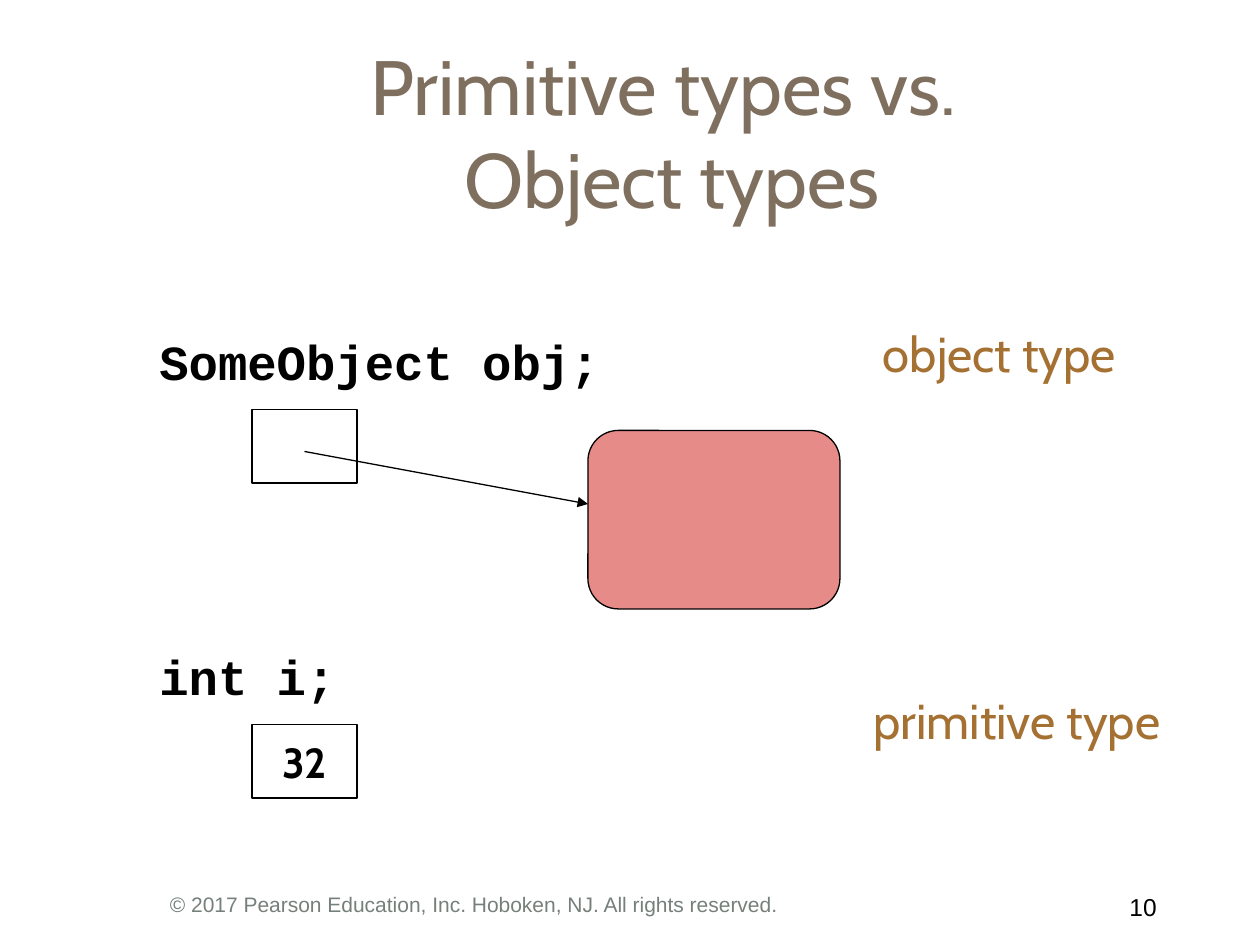
import pptx
import pptx.util
import pptx.dml.color
import pptx.enum.shapes
import pptx.enum.text
import pptx.oxml.ns
import lxml.etree

Pt = pptx.util.Pt
RGBColor = pptx.dml.color.RGBColor
ALIGN = pptx.enum.text.PP_ALIGN
ANCHOR = pptx.enum.text.MSO_ANCHOR
AUTO_SIZE = pptx.enum.text.MSO_AUTO_SIZE
SHAPE = pptx.enum.shapes.MSO_SHAPE

BLACK = RGBColor(0x00, 0x00, 0x00)
TITLE_BROWN = RGBColor(0x7F, 0x6F, 0x5E)
LABEL_BROWN = RGBColor(0xA5, 0x71, 0x33)
FOOTER_GRAY = RGBColor(0x76, 0x80, 0x7A)
OBJECT_PINK = RGBColor(0xE6, 0x8B, 0x88)

VARIABLE_LEFT, VARIABLE_WIDTH, VARIABLE_HEIGHT = 144, 60, 42


def format_text(frame, text, font, size, color, bold=False, align=ALIGN.LEFT):
    frame.text = text
    for para in frame.paragraphs:
        para.alignment = align
        for run in para.runs:
            run.font.name = font
            run.font.size = Pt(size)
            run.font.color.rgb = color
            run.font.bold = bold


def add_title(slide, text):
    title = slide.shapes.title
    title.left, title.top, title.width, title.height = Pt(78), Pt(30), Pt(612), Pt(90)
    format_text(title.text_frame, text, "Cabin", 44, TITLE_BROWN, align=ALIGN.CENTER)
    title.text_frame.vertical_anchor = ANCHOR.MIDDLE
    title.text_frame.auto_size = AUTO_SIZE.NONE


def add_text(slide, left, top, width, height, text, font, size, color, wrap=True, **style):
    box = slide.shapes.add_textbox(Pt(left), Pt(top), Pt(width), Pt(height))
    box.text_frame.word_wrap = wrap
    format_text(box.text_frame, text, font, size, color, **style)


def add_code(slide, top, text):
    add_text(slide, 84, top, 282, 41, text, "Courier New", 28, BLACK, bold=True)


def add_label(slide, left, top, width, text):
    add_text(slide, left, top, width, 41, text, "Cabin", 28, LABEL_BROWN, wrap=False)


def add_outlined(slide, preset, left, top, width, height, fill=None):
    shape = slide.shapes.add_shape(preset, Pt(left), Pt(top), Pt(width), Pt(height))
    shape.shadow.inherit = False
    if fill is None:
        shape.fill.background()
    else:
        shape.fill.solid()
        shape.fill.fore_color.rgb = fill
    shape.line.color.rgb = BLACK
    shape.line.width = Pt(0.75)
    return shape


def add_variable(slide, top, value=""):
    """Draw a memory cell, holding its value if it has one."""
    cell = add_outlined(slide, SHAPE.RECTANGLE, VARIABLE_LEFT, top,
                        VARIABLE_WIDTH, VARIABLE_HEIGHT)
    if value:
        format_text(cell.text_frame, value, "Cabin", 24, BLACK, bold=True, align=ALIGN.CENTER)
        cell.text_frame.vertical_anchor = ANCHOR.MIDDLE
        cell.text_frame.word_wrap = False


def add_arrow(slide, start_x, start_y, end_x, end_y):
    arrow = slide.shapes.add_connector(pptx.enum.shapes.MSO_CONNECTOR.STRAIGHT,
                                       Pt(start_x), Pt(start_y), Pt(end_x), Pt(end_y))
    arrow.line.color.rgb = BLACK
    arrow.line.width = Pt(0.75)
    qualified = pptx.oxml.ns.qn
    lxml.etree.SubElement(arrow.line._get_or_add_ln(), qualified("a:tailEnd"),
                          type="triangle", w="med", len="med")
    lxml.etree.SubElement(arrow._element.spPr, qualified("a:effectLst"))


def main():
    deck = pptx.Presentation()
    deck.slide_width, deck.slide_height = Pt(720), Pt(540)
    slide = deck.slides.add_slide(deck.slide_layouts[5])

    add_title(slide, "Primitive types vs. \vObject types")

    add_code(slide, 186, "SomeObject obj;")
    add_label(slide, 497.5, 181.5, 160, "object type")
    add_variable(slide, 234)
    referenced = add_outlined(slide, SHAPE.ROUNDED_RECTANGLE, 336, 246, 144, 102, OBJECT_PINK)
    referenced.adjustments[0] = 0.17
    add_arrow(slide, VARIABLE_LEFT + VARIABLE_WIDTH / 2, 258, 336, 288)

    add_code(slide, 366, "int i;")
    add_label(slide, 492, 391, 192, "primitive type")
    add_variable(slide, 414, "32")

    add_text(slide, 90, 506, 546, 24,
             "© 2017 Pearson Education, Inc. Hoboken, NJ. All rights reserved.",
             "Arial", 12, FOOTER_GRAY)
    add_text(slide, 630, 506, 42, 24, "10 ", "Arial", 14, BLACK, align=ALIGN.RIGHT)

    deck.save("out.pptx")


if __name__ == "__main__":
    main()
